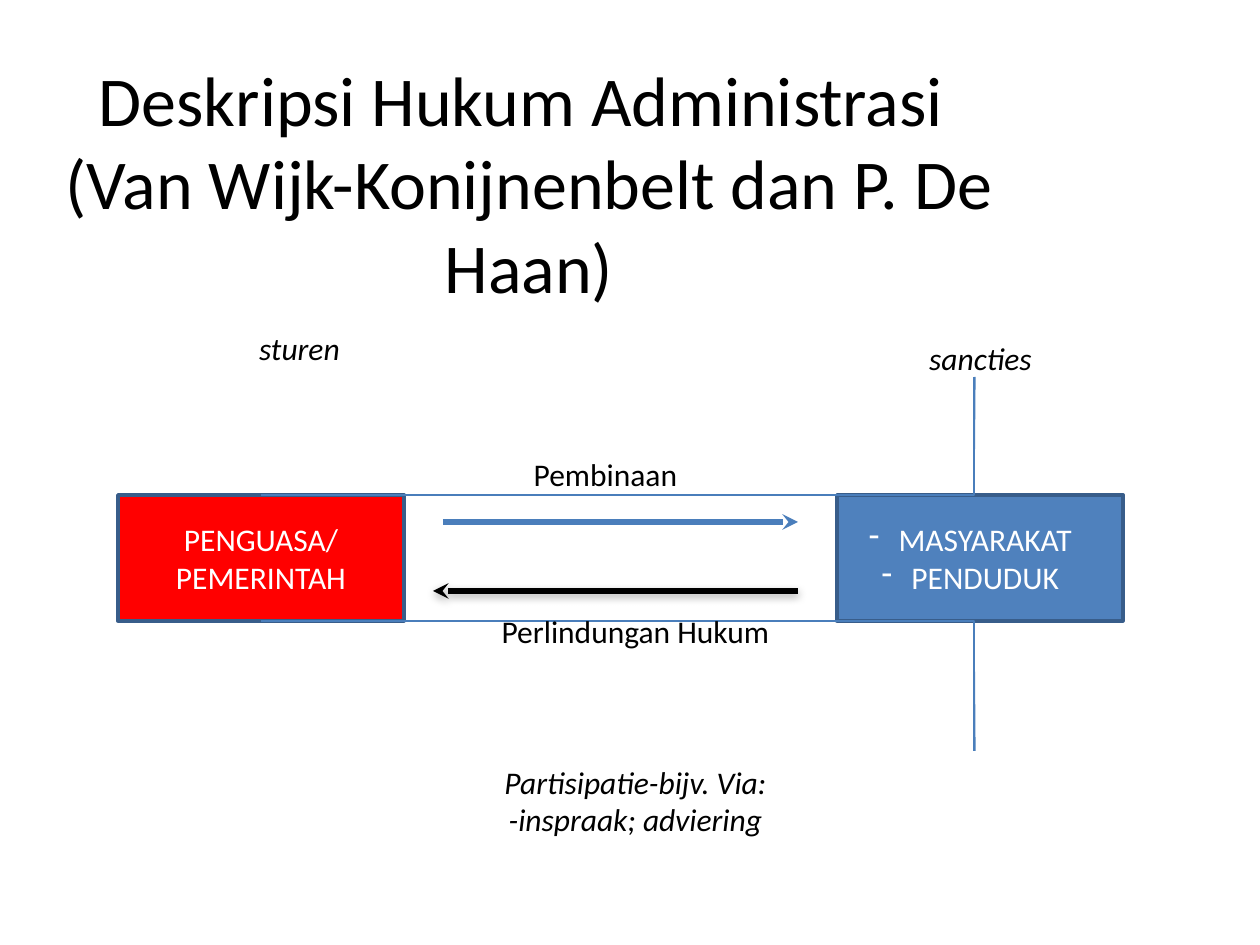
from pptx import Presentation
from pptx.dml.color import RGBColor
from pptx.enum.shapes import MSO_CONNECTOR, MSO_SHAPE
from pptx.enum.text import MSO_ANCHOR, MSO_AUTO_SIZE, PP_ALIGN
from pptx.oxml.ns import qn
from pptx.util import Pt
from lxml.etree import SubElement

EMU_PER_PX = 914400 / 126
BLACK, WHITE, RED = "000000", "FFFFFF", "FF0000"
BLUE, BORDER, LINE = "4F81BD", "385D8A", "4A7EBB"


def px(length):
    return round(length * EMU_PER_PX)


def color(hex_text):
    return RGBColor.from_string(hex_text)


def write(frame, text, size=18, ink=BLACK, italic=False, bullet=None):
    frame.word_wrap = True
    frame.auto_size = MSO_AUTO_SIZE.NONE
    frame.vertical_anchor = MSO_ANCHOR.MIDDLE
    frame.text = text
    for paragraph in frame.paragraphs:
        paragraph.alignment = PP_ALIGN.CENTER
        for run in paragraph.runs:
            run.font.name = "Calibri"
            run.font.size = Pt(size)
            run.font.italic = italic
            run.font.color.rgb = color(ink)
        if bullet:
            properties = paragraph._p.get_or_add_pPr()
            SubElement(properties, qn("a:buFontTx"))
            SubElement(properties, qn("a:buChar"), char=bullet)


def add_label(slide, left, top, text, **text_format):
    label = slide.shapes.add_textbox(px(left), px(top), px(325), px(59))
    write(label.text_frame, text, **text_format)


def add_party(slide, left, text, fill, **text_format):
    party = slide.shapes.add_shape(
        MSO_SHAPE.RECTANGLE, px(left), px(495), px(286), px(126))
    party.shadow.inherit = False
    party.fill.solid()
    party.fill.fore_color.rgb = color(fill)
    party.line.color.rgb = color(BORDER)
    party.line.width = Pt(2)
    write(party.text_frame, text, ink=WHITE, **text_format)


def add_line(slide, start, end, ink=LINE, width=0.75, bent=False,
             arrow=False, shadow=False):
    kind = MSO_CONNECTOR.ELBOW if bent else MSO_CONNECTOR.STRAIGHT
    line = slide.shapes.add_connector(kind, *map(px, start + end))
    line.line.color.rgb = color(ink)
    line.line.width = Pt(width)
    properties = line._element.spPr
    if bent:
        properties.find(qn("a:prstGeom")).set("prst", "bentConnector2")
    if arrow:
        SubElement(line.line._get_or_add_ln(), qn("a:tailEnd"), type="stealth")
    effects = SubElement(properties, qn("a:effectLst"))
    if shadow:
        outer = SubElement(effects, qn("a:outerShdw"), blurRad=str(Pt(5)),
                           dist=str(Pt(1.8)), dir="5400000", rotWithShape="0")
        shade = SubElement(outer, qn("a:srgbClr"), val=BLACK)
        SubElement(shade, qn("a:alpha"), val="35000")


def add_title(slide, text):
    title = slide.shapes.title
    title.left, title.top = px(21), px(103)
    title.width, title.height = px(1016), px(158)
    write(title.text_frame, text, size=40)


def main():
    deck = Presentation()
    deck.slide_width, deck.slide_height = px(1260), px(945)
    slide = deck.slides.add_slide(deck.slide_layouts[5])

    add_title(slide, "Deskripsi Hukum Administrasi \v"
                     "(Van Wijk-Konijnenbelt dan P. De Haan)")
    add_party(slide, 118, "PENGUASA/\nPEMERINTAH", RED)
    add_party(slide, 837, "MASYARAKAT\nPENDUDUK", BLUE, bullet="-")

    for edge, outer_end in ((495, 377), (621, 751)):
        add_line(slide, (261, edge), (974, outer_end), bent=True)
        add_line(slide, (975, outer_end), (974, edge))

    add_line(slide, (798, 591), (433, 591), ink=BLACK, width=3,
             arrow=True, shadow=True)
    add_line(slide, (443, 522), (798, 522), width=3, arrow=True)

    add_label(slide, 443, 444, "Pembinaan")
    add_label(slide, 473, 601, "Perlindungan Hukum")
    add_label(slide, 137, 318, "sturen", italic=True)
    add_label(slide, 818, 328, "sancties", italic=True)
    add_label(slide, 473, 771, "Partisipatie-bijv. Via:\n-inspraak; adviering",
              italic=True)

    deck.save("out.pptx")


if __name__ == "__main__":
    main()
